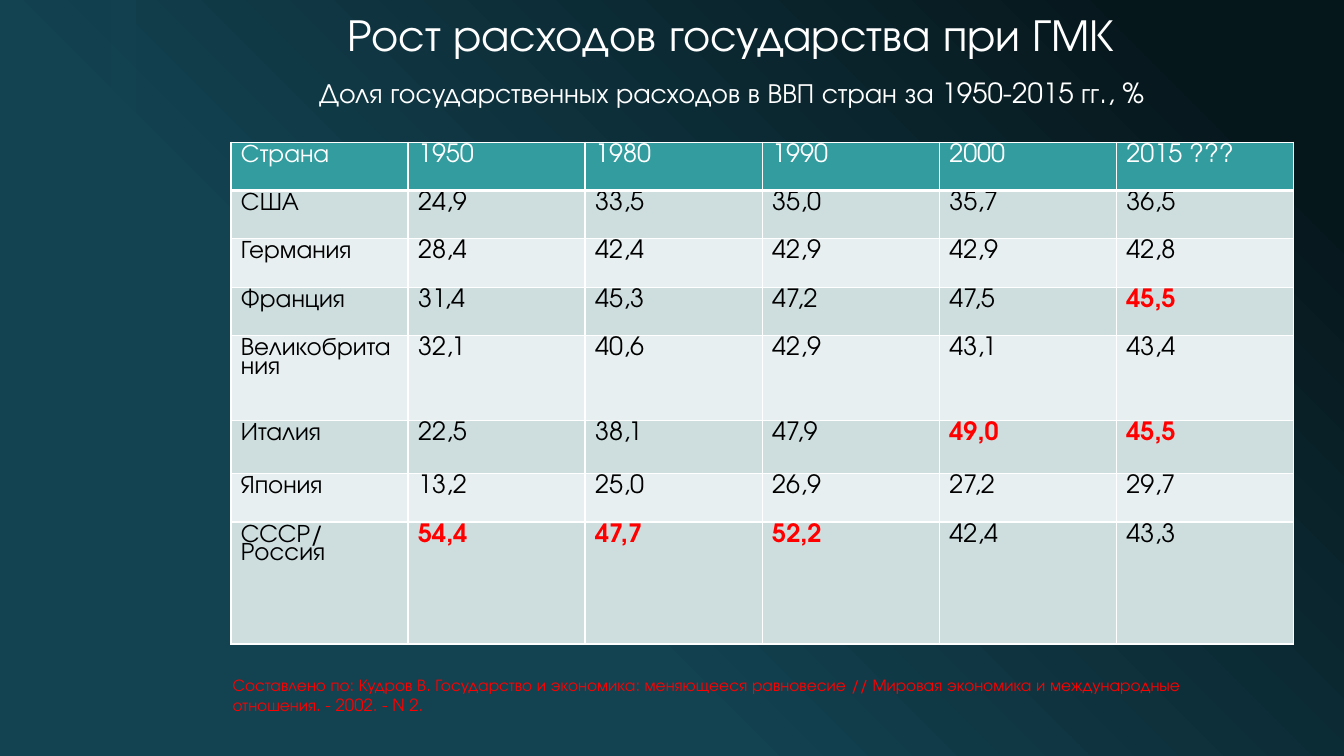
from lxml import etree
from pptx import Presentation
from pptx.dml.color import RGBColor
from pptx.enum.shapes import MSO_SHAPE
from pptx.enum.text import MSO_ANCHOR, PP_ALIGN
from pptx.oxml.ns import qn
from pptx.util import Inches, Pt

RECTANGLE = MSO_SHAPE.RECTANGLE
BOTTOM = MSO_ANCHOR.BOTTOM
CENTER, LEFT = PP_ALIGN.CENTER, PP_ALIGN.LEFT
TITLE_ONLY = 5

COLORS = {
    "night": "06171C", "sea": "134251", "header": "339C9F",
    "band_dark": "CEDEDF", "band_light": "E8EFF0",
    "white": "FFFFFF", "black": "000000", "red": "FF0000",
}

ROWS = [
    ["Страна", "1950", "1980", "1990", "2000", "2015 ???"],
    ["США", "24,9", "33,5", "35,0", "35,7", "36,5"],
    ["Германия", "28,4", "42,4", "42,9", "42,9", "42,8"],
    ["Франция", "31,4", "45,3", "47,2", "47,5", "45,5"],
    ["Великобритания", "32,1", "40,6", "42,9", "43,1", "43,4"],
    ["Италия", "22,5", "38,1", "47,9", "49,0", "45,5"],
    ["Япония", "13,2", "25,0", "26,9", "27,2", "29,7"],
    ["СССР/\nРоссия", "54,4", "47,7", "52,2", "42,4", "43,3"],
]
ROW_HEIGHTS = [0.48, 0.48, 0.48, 0.48, 0.84, 0.53, 0.48, 1.21]
HIGHLIGHTS = {(3, 5), (5, 4), (5, 5), (7, 1), (7, 2), (7, 3)}


class SlideBuilder:
    font = "TeX Gyre Adventor"

    def __init__(self, deck):
        self.page = deck.slides.add_slide(deck.slide_layouts[TITLE_ONLY])

    def color(self, name):
        return RGBColor.from_string(COLORS[name])

    def place(self, shape, left, top, width, height):
        shape.left, shape.top = Inches(left), Inches(top)
        shape.width, shape.height = Inches(width), Inches(height)

    def background(self, first, last, angle):
        fill = self.page.background.fill
        fill.gradient()
        fill.gradient_angle = angle
        for stop, (name, position) in zip(fill.gradient_stops, (first, last)):
            stop.color.rgb = self.color(name)
            stop.position = position

    def stripe(self, left, top, width, height, color, opacity):
        shape = self.page.shapes.add_shape(
            RECTANGLE, Inches(left), Inches(top), Inches(width), Inches(height))
        shape.shadow.inherit = False
        shape.fill.solid()
        shape.fill.fore_color.rgb = self.color(color)
        shape.line.fill.background()
        tone = shape.element.spPr.find(qn("a:solidFill"))[0]
        etree.SubElement(tone, qn("a:alpha"), val=str(opacity * 1000))

    def add_span(self, para, text, size, color, bold=False, align=LEFT, spacing=1.0):
        para.alignment = align
        para.line_spacing = spacing
        span = para.add_run()
        span.text = text
        span.font.name = self.font
        span.font.size = Pt(size)
        span.font.bold = bold
        span.font.color.rgb = self.color(color)

    def title(self, heading, subheading, *area):
        box = self.page.shapes.title
        self.place(box, *area)
        frame = box.text_frame
        frame.word_wrap = True
        frame.vertical_anchor = BOTTOM
        self.add_span(frame.paragraphs[0], heading, 32.4, "white", align=CENTER, spacing=0.9)
        para = frame.add_paragraph()
        para.space_before = Pt(13)
        self.add_span(para, subheading, 19.8, "white", align=CENTER, spacing=0.9)

    def text(self, text, size, color, *area):
        box = self.page.shapes.add_textbox(*map(Inches, area))
        box.text_frame.word_wrap = True
        self.add_span(box.text_frame.paragraphs[0], text, size, color)

    def borders(self, cell, bottom_width):
        properties = cell._tc.get_or_add_tcPr()
        for side, width in zip("LRTB", (1, 1, 1, bottom_width)):
            line = etree.SubElement(properties, qn(f"a:ln{side}"), w=str(Pt(width)))
            fill = etree.SubElement(line, qn("a:solidFill"))
            etree.SubElement(fill, qn("a:srgbClr"), val=COLORS["white"])

    def table(self, rows, heights, highlights, left, top, width):
        columns = len(rows[0])
        table = self.page.shapes.add_table(
            len(rows), columns, Inches(left), Inches(top),
            Inches(width), Inches(sum(heights))).table
        for column in table.columns:
            column.width = Inches(width / columns)
        for r, (values, height) in enumerate(zip(rows, heights)):
            table.rows[r].height = Inches(height)
            band = "header" if r == 0 else "band_dark" if r % 2 else "band_light"
            for c, value in enumerate(values):
                cell = table.cell(r, c)
                self.borders(cell, 3 if r == 0 else 1)
                cell.fill.solid()
                cell.fill.fore_color.rgb = self.color(band)
                marked = (r, c) in highlights
                color = "white" if r == 0 else "red" if marked else "black"
                frame = cell.text_frame
                for index, line in enumerate(value.split("\n")):
                    para = frame.add_paragraph() if index else frame.paragraphs[0]
                    self.add_span(para, line, 18, color, bold=marked, spacing=0.8)


def main():
    deck = Presentation()
    deck.slide_width, deck.slide_height = Inches(13.33), Inches(7.5)
    slide = SlideBuilder(deck)
    slide.background(("night", 0.1), ("sea", 0.65), angle=225)
    slide.stripe(1.1, 0, 0.25, 7.5, "sea", opacity=60)
    slide.title("Рост расходов государства при ГМК",
                "Доля государственных расходов в ВВП стран за 1950-2015 гг., %",
                1.39, 0.42, 11.73, 0.72)
    slide.table(ROWS, ROW_HEIGHTS, HIGHLIGHTS, 2.29, 1.41, 10.54)
    slide.text("Составлено по: Кудров В. Государство и экономика: меняющееся "
               "равновесие // Мировая экономика и международные отношения. "
               "- 2002. - N 2.", 12, "red", 2.21, 6.64, 10.47, 0.5)
    deck.save("out.pptx")


if __name__ == "__main__":
    main()
